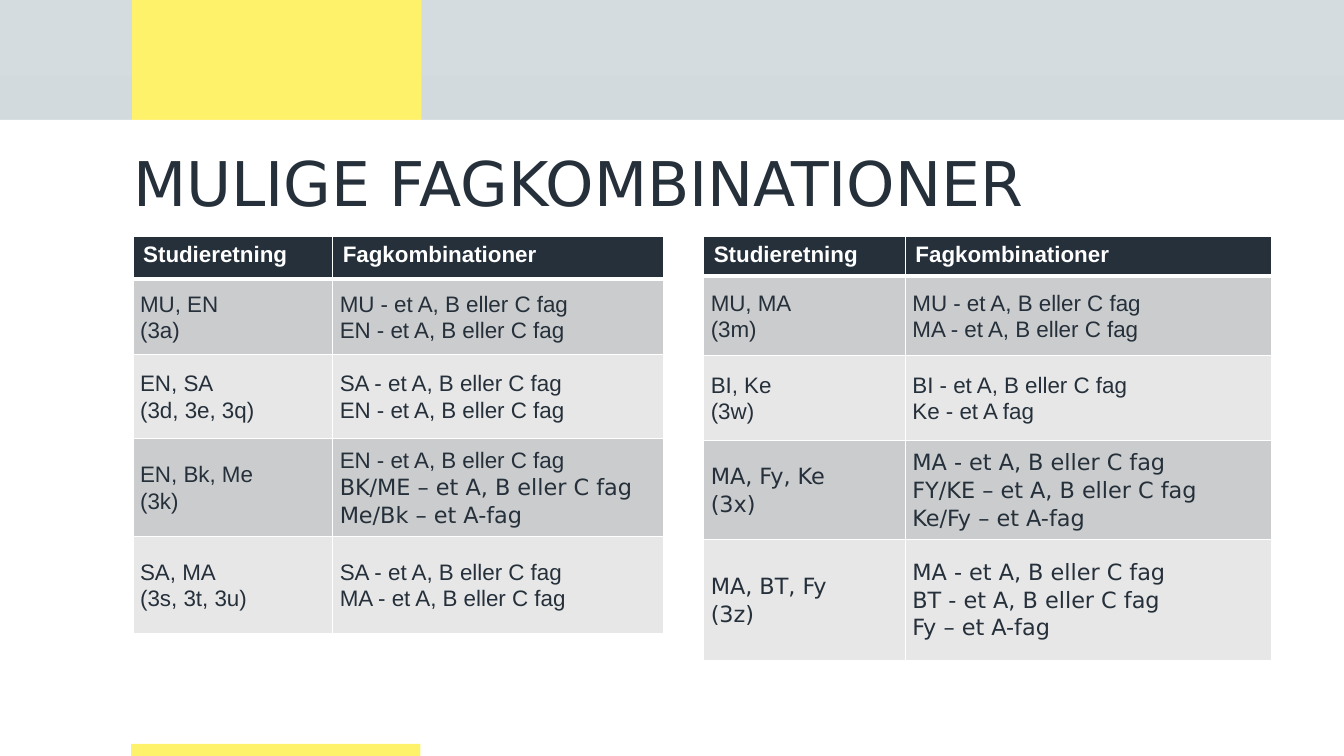
from copy import deepcopy
from dataclasses import dataclass

from pptx import Presentation
from pptx.dml.color import RGBColor
from pptx.enum import shapes, text
from pptx.oxml import parse_xml
from pptx.oxml.ns import nsdecls, qn
from pptx.util import Inches, Pt


@dataclass(frozen=True)
class Theme:
    ink: str = "25303B"
    white: str = "FFFFFF"
    yellow: str = "FFF26B"
    bands: tuple = ("CBCCCD", "E7E7E7")
    backdrop: tuple = ((0, "D5DCE0"), (0.5, "CDD3D7"), (1, "A9AEB1"))
    title_font: str = "DejaVu Sans"
    body_font: str = "Arial"
    title_size: int = 44
    body_size: int = 16


class SlideBuilder:
    def __init__(self, slide, theme):
        self.slide = slide
        self.theme = theme

    def backdrop(self):
        fill = self.slide.background.fill
        fill.gradient()
        fill.gradient_angle = 270
        stop_list = self.slide.element.find(".//" + qn("a:gsLst"))
        stop_list.append(deepcopy(stop_list[0]))
        for stop, (position, color) in zip(fill.gradient_stops, self.theme.backdrop):
            stop.position = position
            stop.color.rgb = RGBColor.from_string(color)

    def block(self, box, color):
        block = self.slide.shapes.add_shape(
            shapes.MSO_SHAPE.RECTANGLE, *map(Inches, box))
        block.shadow.inherit = False
        block.fill.solid()
        block.fill.fore_color.rgb = RGBColor.from_string(color)
        block.line.fill.background()

    def title(self, wording, box):
        title = self.slide.shapes.title
        title.left, title.top, title.width, title.height = map(Inches, box)
        frame = title.text_frame
        frame.text = wording
        frame.word_wrap = True
        frame.auto_size = text.MSO_AUTO_SIZE.NONE
        frame.vertical_anchor = text.MSO_ANCHOR.BOTTOM
        frame.margin_left = frame.margin_right = 0
        frame.margin_top = frame.margin_bottom = 0
        paragraph = frame.paragraphs[0]
        paragraph.alignment = text.PP_ALIGN.LEFT
        paragraph.line_spacing = 0.85
        self.format_runs(paragraph, self.theme.title_font,
                         self.theme.title_size, self.theme.ink)

    def format_runs(self, paragraph, font_name, size, color, bold=False):
        for run in paragraph.runs:
            run.font.name = font_name
            run.font.size = Pt(size)
            run.font.bold = bold
            run.font.color.rgb = RGBColor.from_string(color)
        for line_break in paragraph._p.findall(qn("a:br")):
            line_break.append(deepcopy(paragraph.runs[0]._r.rPr))

    def borders(self, cell, top=1, bottom=1):
        """White cell borders; widths in points."""
        properties = cell._tc.get_or_add_tcPr()
        widths = {"lnL": 1, "lnR": 1, "lnT": top, "lnB": bottom}
        for index, (side, width) in enumerate(widths.items()):
            properties.insert(index, parse_xml(
                f'<a:{side} {nsdecls("a")} w="{Pt(width)}"><a:solidFill>'
                f'<a:srgbClr val="{self.theme.white}"/></a:solidFill></a:{side}>'))

    def cell(self, cell, wording, fill, fonts, is_header=False):
        cell.fill.solid()
        cell.fill.fore_color.rgb = RGBColor.from_string(fill)
        side, edge = (0.1, 0.05) if is_header else (0.07, 0)
        cell.margin_left = cell.margin_right = Inches(side)
        cell.margin_top = cell.margin_bottom = Inches(edge)
        cell.vertical_anchor = (
            text.MSO_ANCHOR.TOP if is_header else text.MSO_ANCHOR.MIDDLE)
        cell.text_frame.text = wording
        color = self.theme.white if is_header else self.theme.ink
        for paragraph, font_name in zip(cell.text_frame.paragraphs, fonts):
            if not is_header:
                paragraph.line_spacing = 1.07
            self.format_runs(paragraph, font_name, self.theme.body_size,
                             color, bold=is_header)

    def subject_table(self, left, columns, header_height, rows):
        """Each row: height, study line, combinations, paragraphs in the body font."""
        top = 2.35
        heights = [header_height] + [row[0] for row in rows]
        table = self.slide.shapes.add_table(
            len(heights), len(columns), Inches(left), Inches(top),
            Inches(sum(columns)), Inches(sum(heights))).table
        for column, width in zip(table.columns, columns):
            column.width = Inches(width)
        for row, height in zip(table.rows, heights):
            row.height = Inches(height)

        for column, heading in enumerate(("Studieretning", "Fagkombinationer")):
            header = table.cell(0, column)
            self.cell(header, heading, self.theme.ink,
                      [self.theme.body_font], is_header=True)
            self.borders(header, bottom=3)

        for number, (_, study_line, combinations, body_count) in enumerate(rows, 1):
            fonts = [self.theme.body_font if index < body_count
                     else self.theme.title_font
                     for index in range(len(combinations) + 1)]
            band = self.theme.bands[(number - 1) % 2]
            contents = ((study_line, fonts[:1]),
                        ("\n".join(combinations), fonts[1:]))
            for column, (wording, cell_fonts) in enumerate(contents):
                cell = table.cell(number, column)
                self.cell(cell, wording, band, cell_fonts)
                self.borders(cell, top=3 if number == 1 else 1)


ANY_LEVEL = "et A, B eller C fag"
LEFT_ROWS = [
    (0.75, "MU, EN\v(3a)", [f"MU - {ANY_LEVEL}", f"EN - {ANY_LEVEL}"], 3),
    (0.83, "EN, SA\v(3d, 3e, 3q)", [f"SA - {ANY_LEVEL}", f"EN - {ANY_LEVEL}"], 3),
    (0.97, "EN, Bk, Me\v(3k)",
     [f"EN - {ANY_LEVEL}", f"BK/ME – {ANY_LEVEL}", "Me/Bk – et A-fag"], 2),
    (0.97, "SA, MA\v(3s, 3t, 3u)", [f"SA - {ANY_LEVEL}", f"MA - {ANY_LEVEL}"], 3),
]
RIGHT_ROWS = [
    (0.79, "MU, MA\v(3m)", [f"MU - {ANY_LEVEL}", f"MA - {ANY_LEVEL}"], 3),
    (0.84, "BI, Ke\v(3w)", [f"BI - {ANY_LEVEL}", "Ke - et A fag"], 3),
    (0.98, "MA, Fy, Ke\v(3x)",
     [f"MA - {ANY_LEVEL}", f"FY/KE – {ANY_LEVEL}", "Ke/Fy – et A-fag"], 0),
    (1.2, "MA, BT, Fy\v(3z)",
     [f"MA - {ANY_LEVEL}", f"BT - {ANY_LEVEL}", "Fy – et A-fag"], 0),
]


def main():
    deck = Presentation()
    deck.slide_width, deck.slide_height = Inches(13.33), Inches(7.5)
    theme = Theme()
    builder = SlideBuilder(deck.slides.add_slide(deck.slide_layouts[5]), theme)
    builder.backdrop()
    builder.block((1.31, 0, 2.87, 7.5), theme.yellow)
    builder.block((0, 1.19, 13.33, 6.31), theme.white)
    builder.block((1.3, 7.38, 2.87, 0.12), theme.yellow)
    # The title placeholder is already on the slide, so bring it above the panels.
    title = builder.slide.shapes.title._element
    title.getparent().append(title)
    builder.title("MULIGE FAGKOMBINATIONER", (1.32, 1.31, 10.71, 0.86))
    builder.subject_table(1.32, (1.98, 3.28), 0.42, LEFT_ROWS)
    builder.subject_table(6.98, (2, 3.63), 0.39, RIGHT_ROWS)
    deck.save("out.pptx")


if __name__ == "__main__":
    main()
